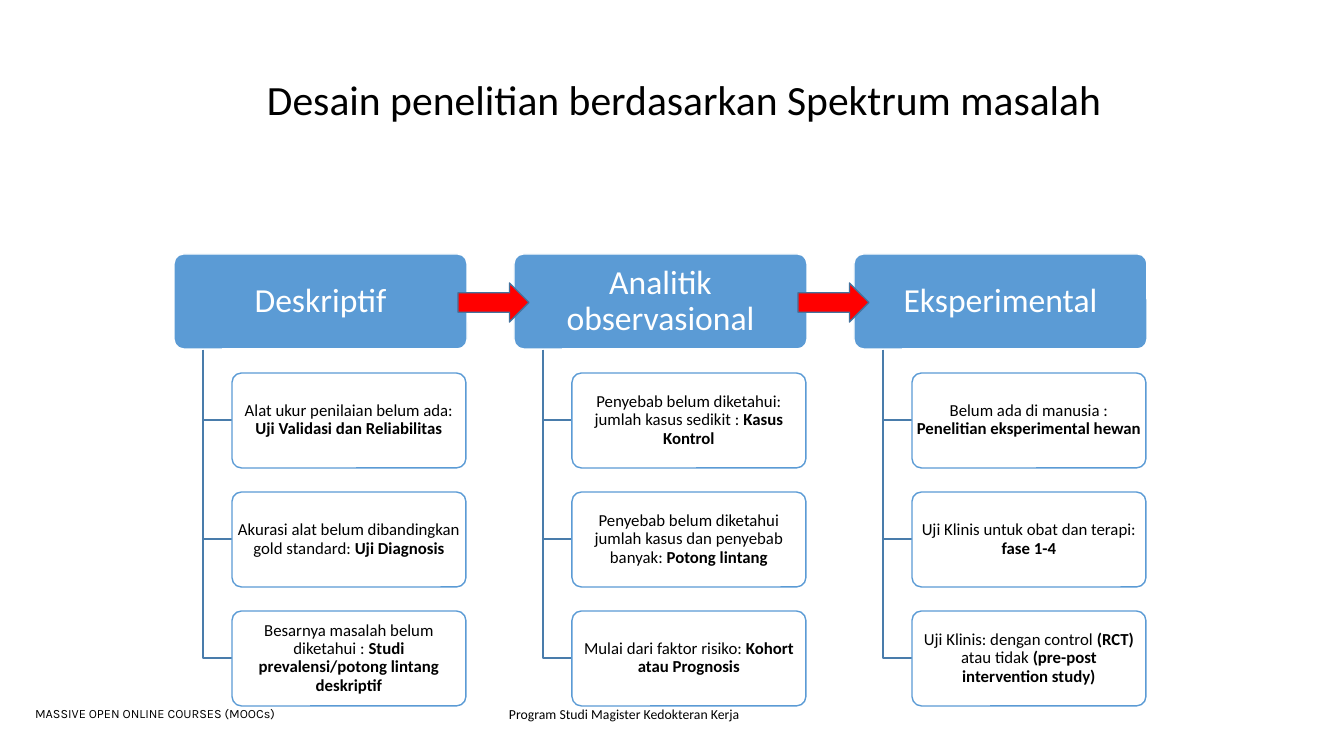
from lxml import etree
from pptx import Presentation
from pptx.dml.color import RGBColor
from pptx.enum.shapes import MSO_SHAPE
from pptx.enum.text import MSO_ANCHOR, PP_ALIGN
from pptx.oxml.ns import qn
from pptx.util import Pt

PX = 914400 / 100.8
FONT = "Calibri"
ROUNDED = MSO_SHAPE.ROUNDED_RECTANGLE
ARROW = MSO_SHAPE.RIGHT_ARROW
LEFT, CENTER = PP_ALIGN.LEFT, PP_ALIGN.CENTER
TOP, MIDDLE = MSO_ANCHOR.TOP, MSO_ANCHOR.MIDDLE
BLACK = RGBColor(0x00, 0x00, 0x00)
WHITE = RGBColor(0xFF, 0xFF, 0xFF)
BLUE = RGBColor(0x5B, 0x9B, 0xD5)
BRANCH_BLUE = RGBColor(0x49, 0x7C, 0xAB)
ARROW_EDGE = RGBColor(0x43, 0x73, 0x9E)
RED = RGBColor(0xFF, 0x00, 0x00)

COLUMN_LEFT, COLUMN_PITCH = 174, 340
HEADER_TOP, HEADER_WIDTH, BOX_HEIGHT = 254, 293, 95
TRUNK_INDENT, TRUNK_TOP = 29, 350
ITEM_INDENT, ITEM_TOP, ITEM_WIDTH, ITEM_PITCH = 58, 373, 234, 119
ARROW_OFFSET, ARROW_TOP, ARROW_WIDTH, ARROW_HEIGHT = 284, 283, 71, 39

COLUMNS = [
    ("Deskriptif", [
        [("Alat ukur penilaian belum ada: ", False),
         ("Uji Validasi dan Reliabilitas", True)],
        [("Akurasi alat belum dibandingkan gold standard: ", False),
         ("Uji Diagnosis", True)],
        [("Besarnya masalah belum diketahui : ", False),
         ("Studi prevalensi/potong lintang deskriptif", True)],
    ]),
    ("Analitik observasional", [
        [("Penyebab belum diketahui: jumlah kasus sedikit : ", False),
         ("Kasus Kontrol", True)],
        [("Penyebab belum diketahui jumlah kasus dan penyebab banyak: ", False),
         ("Potong lintang", True)],
        [("Mulai dari faktor risiko: ", False),
         ("Kohort atau Prognosis", True)],
    ]),
    ("Eksperimental", [
        [("Belum ada di manusia : ", False),
         ("Penelitian eksperimental hewan", True)],
        [("Uji Klinis untuk obat dan terapi: ", False),
         ("fase 1-4", True)],
        [("Uji Klinis: dengan control ", False), ("(RCT) ", True),
         ("atau tidak ", False), ("(pre-post intervention study)", True)],
    ]),
]


def emu(*lengths):
    """Turn pixel lengths into EMU."""
    return [round(length * PX) for length in lengths]


def write(box, spans, size, color=BLACK, font=FONT, align=LEFT, anchor=TOP,
          spacing=1.0, insets=(10, 5)):
    """Fill a box with one paragraph of (text, bold) spans."""
    frame = box.text_frame
    frame.word_wrap = True
    frame.vertical_anchor = anchor
    frame.margin_left = frame.margin_right = emu(insets[0])[0]
    frame.margin_top = frame.margin_bottom = emu(insets[1])[0]
    para = frame.paragraphs[0]
    para.alignment = align
    para.line_spacing = spacing
    for text, bold in spans:
        span = para.add_run()
        span.text = text
        span.font.name = font
        span.font.size = Pt(size)
        span.font.bold = bold
        span.font.color.rgb = color


def add_label(page, text, place, **style):
    """Add a plain text box."""
    box = page.shapes.add_textbox(*emu(*place))
    write(box, [(text, False)], **style)


def add_box(page, kind, place, fill, line):
    """Add a filled and outlined preset shape."""
    box = page.shapes.add_shape(kind, *emu(*place))
    box.shadow.inherit = False
    box.fill.solid()
    box.fill.fore_color.rgb = fill
    box.line.color.rgb = line
    box.line.width = Pt(1)
    return box


def add_card(page, place, spans, fill, line, **style):
    """Add a rounded box with centred text."""
    card = add_box(page, ROUNDED, place, fill, line)
    card.adjustments[0] = 0.1
    write(card, spans, align=CENTER, anchor=MIDDLE, spacing=0.9, **style)
    return card


def set_opacity(box, percent):
    """Set the opacity of a solid fill."""
    color = box.element.spPr.find(qn("a:solidFill"))[0]
    etree.SubElement(color, qn("a:alpha"), val=str(percent * 1000))


def add_branch(page, left, top, right, bottom):
    """Draw an elbow from a header down to an item."""
    left, top, right, bottom = emu(left, top, right, bottom)
    builder = page.shapes.build_freeform(left, top)
    builder.add_line_segments([(left, bottom), (right, bottom)], close=False)
    branch = builder.convert_to_shape()
    branch.shadow.inherit = False
    branch.fill.background()
    branch.line.color.rgb = BRANCH_BLUE
    branch.line.width = Pt(1)


def add_column(page, left, heading, items):
    """Add a header with its branches and items."""
    add_card(page, (left, HEADER_TOP, HEADER_WIDTH, BOX_HEIGHT),
             [(heading, False)], BLUE, WHITE,
             size=24, color=WHITE, insets=(5, 3))
    item_left = left + ITEM_INDENT
    for row, spans in enumerate(items):
        top = ITEM_TOP + row * ITEM_PITCH
        add_branch(page, left + TRUNK_INDENT, TRUNK_TOP,
                   item_left, top + BOX_HEIGHT // 2)
        card = add_card(page, (item_left, top, ITEM_WIDTH, BOX_HEIGHT),
                        spans, WHITE, BLUE, size=12, insets=(2, 2))
        set_opacity(card, 90)


def main():
    """Build and save the slide."""
    deck = Presentation()
    deck.slide_width, deck.slide_height = emu(1344, 756)
    page = deck.slides.add_slide(deck.slide_layouts[6])
    add_label(page, "Program Studi Magister Kedokteran Kerja",
              (499, 701, 821, 27), size=9.8)
    add_label(page, "MASSIVE OPEN ONLINE COURSES (MOOCs)",
              (25, 701, 575, 25), size=9, font="Karla")
    add_label(page, "Desain penelitian berdasarkan Spektrum masalah",
              (257, 49, 891, 107), size=29.7, anchor=MIDDLE, spacing=0.9)
    lefts = [COLUMN_LEFT + index * COLUMN_PITCH for index in range(len(COLUMNS))]
    for left, (heading, items) in zip(lefts, COLUMNS):
        add_column(page, left, heading, items)
    for left in lefts[:-1]:
        add_box(page, ARROW, (left + ARROW_OFFSET, ARROW_TOP,
                              ARROW_WIDTH, ARROW_HEIGHT), RED, ARROW_EDGE)
    deck.save("out.pptx")


if __name__ == "__main__":
    main()
